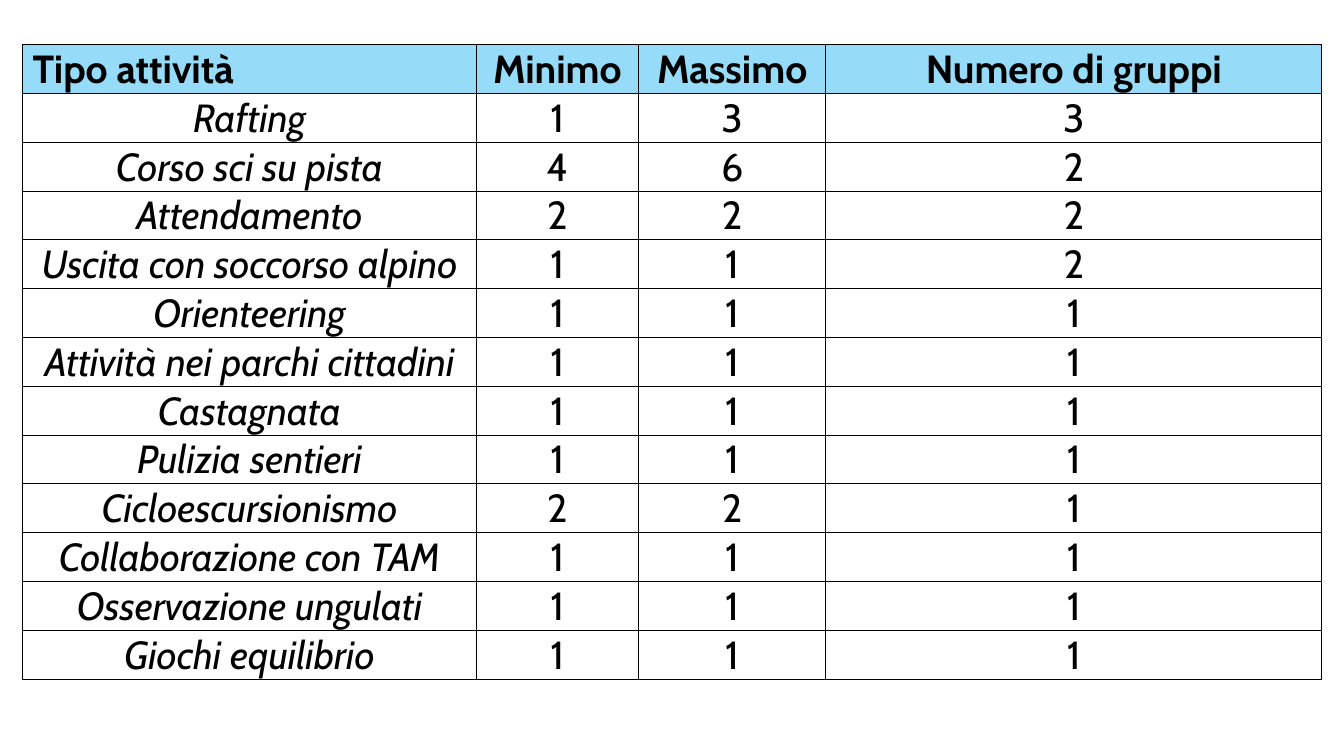
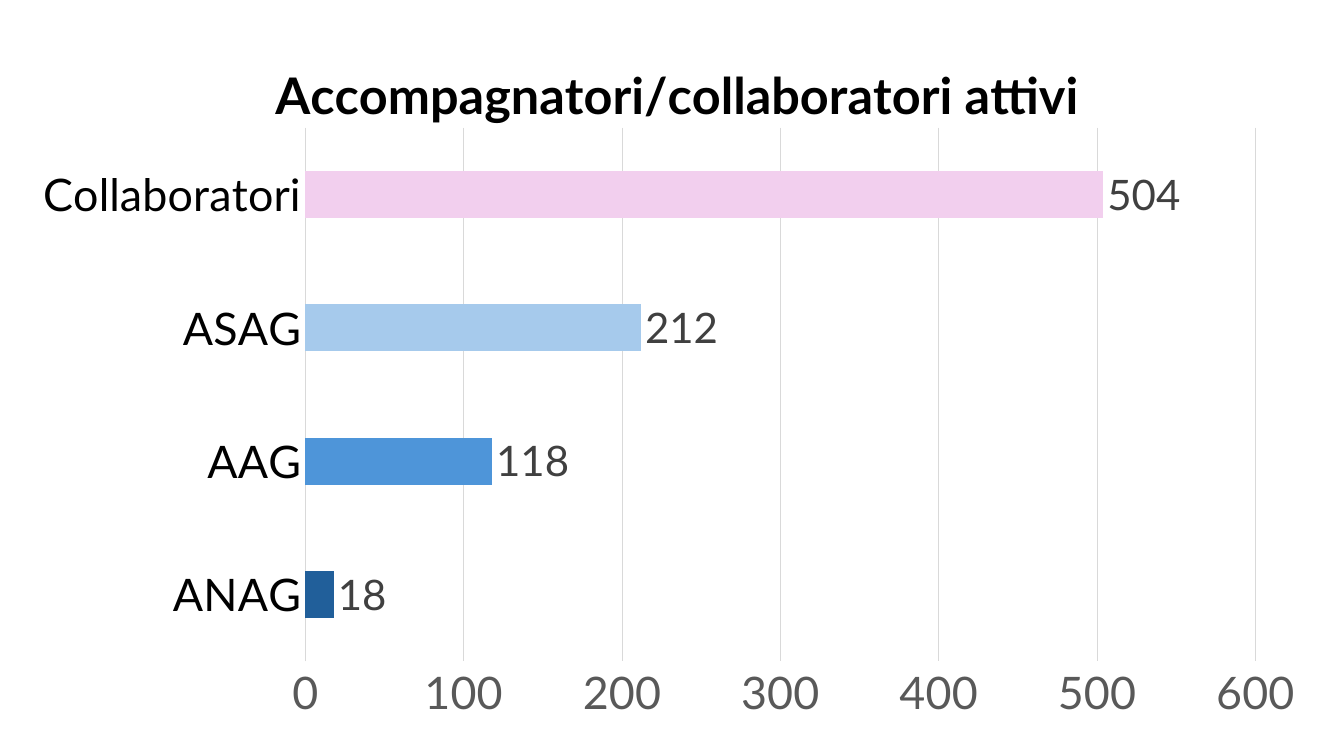
from lxml import etree
from pptx import Presentation
from pptx.chart import data
from pptx.dml import color
from pptx.enum import chart as ch, text
from pptx.oxml import ns
from pptx.util import Cm, Pt

BLACK, DARK_GREY, GREY, GRID_GREY = "000000", "404040", "595959", "D9D9D9"
HEADER_BLUE = "96DCF8"
TABLE_FONT, CHART_FONT = "Cabin", "Lato"

COLUMN_WIDTHS = 11.43, 4.09, 4.72, 12.5
ROW_HEIGHT = 1.21
HEADER = "Tipo attività", "Minimo", "Massimo", "Numero di gruppi"
ACTIVITIES = [
    ("Rafting", 1, 3, 3),
    ("Corso sci su pista", 4, 6, 2),
    ("Attendamento", 2, 2, 2),
    ("Uscita con soccorso alpino", 1, 1, 2),
    ("Orienteering", 1, 1, 1),
    ("Attività nei parchi cittadini", 1, 1, 1),
    ("Castagnata", 1, 1, 1),
    ("Pulizia sentieri", 1, 1, 1),
    ("Cicloescursionismo", 2, 2, 1),
    ("Collaborazione con TAM", 1, 1, 1),
    ("Osservazione ungulati", 1, 1, 1),
    ("Giochi equilibrio", 1, 1, 1),
]
LEADERS = [
    ("ANAG", 18, "215F9A"),
    ("AAG", 118, "4E95D9"),
    ("ASAG", 212, "A6CAEC"),
    ("Collaboratori", 504, "F2CFEE"),
]


def rgb(value):
    return color.RGBColor.from_string(value)


def set_font(font, name, size, hex_color, bold=False, italic=False):
    font.name, font.size = name, Pt(size)
    font.bold, font.italic = bold, italic
    font.color.rgb = rgb(hex_color)


def set_fill(fill, hex_color):
    fill.solid()
    fill.fore_color.rgb = rgb(hex_color)


def set_line(line, hex_color, width):
    line.color.rgb = rgb(hex_color)
    line.width = Pt(width)


def add_borders(cell, hex_color, width):
    tc_pr = cell._tc.get_or_add_tcPr()
    for i, side in enumerate(("lnL", "lnR", "lnT", "lnB")):
        ln = etree.Element(ns.qn(f"a:{side}"), w=str(Pt(width)))
        fill = etree.SubElement(ln, ns.qn("a:solidFill"))
        etree.SubElement(fill, ns.qn("a:srgbClr"), val=hex_color)
        tc_pr.insert(i, ln)


def fill_cell(cell, value, is_header, is_first):
    cell.vertical_anchor = text.MSO_ANCHOR.MIDDLE
    left_aligned = is_header and is_first
    cell.margin_left = Cm(0.25 if left_aligned else 0.03)
    cell.margin_right = cell.margin_top = Cm(0.03)
    cell.margin_bottom = 0
    p = cell.text_frame.paragraphs[0]
    p.alignment = text.PP_ALIGN.LEFT if left_aligned else text.PP_ALIGN.CENTER
    r = p.add_run()
    r.text = str(value)
    set_font(r.font, TABLE_FONT, 28, BLACK, bold=is_header,
             italic=is_first and not is_header)
    if is_header:
        set_fill(cell.fill, HEADER_BLUE)
    else:
        cell.fill.background()
    add_borders(cell, BLACK, 0.5)


def add_activity_table(s, left, top):
    rows = [HEADER, *ACTIVITIES]
    table = s.shapes.add_table(
        len(rows), len(HEADER), Cm(left), Cm(top),
        Cm(sum(COLUMN_WIDTHS)), Cm(ROW_HEIGHT * len(rows))).table
    table.horz_banding = False
    for column, width in zip(table.columns, COLUMN_WIDTHS):
        column.width = Cm(width)
    for i, values in enumerate(rows):
        table.rows[i].height = Cm(ROW_HEIGHT)
        for j, value in enumerate(values):
            fill_cell(table.cell(i, j), value, i == 0, j == 0)


def set_layout(parent, index, **settings):
    """Place a chart part by fractions of the chart's size."""
    for old in parent.findall(ns.qn("c:layout")):
        parent.remove(old)
    layout = etree.Element(ns.qn("c:layout"))
    manual = etree.SubElement(layout, ns.qn("c:manualLayout"))
    for tag, value in settings.items():
        etree.SubElement(manual, ns.qn(f"c:{tag}"), val=str(value))
    parent.insert(index, layout)


def style_axes(chart):
    for axis, hex_color in ((chart.category_axis, BLACK), (chart.value_axis, GREY)):
        axis.major_tick_mark = axis.minor_tick_mark = ch.XL_TICK_MARK.NONE
        set_font(axis.tick_labels.font, CHART_FONT, 32, hex_color)
    set_line(chart.category_axis.format.line, GRID_GREY, 0.75)
    values = chart.value_axis
    values.minimum_scale, values.maximum_scale, values.major_unit = 0, 600, 100
    values.format.line.fill.background()
    set_line(values.major_gridlines.format.line, GRID_GREY, 0.75)


def style_bars(plot):
    plot.gap_width = 182
    plot.vary_by_categories = False
    series = plot.series[0]
    set_fill(series.format.fill, "156082")
    for i, (_, _, hex_color) in enumerate(LEADERS):
        set_fill(series.points[i].format.fill, hex_color)
    labels = series.data_labels
    labels.show_value = True
    labels.position = ch.XL_LABEL_POSITION.OUTSIDE_END
    set_font(labels.font, CHART_FONT, 30, DARK_GREY)


def add_leader_chart(s, left, top, width, height):
    chart_data = data.CategoryChartData()
    chart_data.categories = [name for name, _, _ in LEADERS]
    chart_data.add_series("Series 1", [count for _, count, _ in LEADERS])
    chart = s.shapes.add_chart(
        ch.XL_CHART_TYPE.BAR_CLUSTERED, Cm(left), Cm(top),
        Cm(width), Cm(height), chart_data).chart
    set_font(chart.font, CHART_FONT, 10, BLACK)
    chart.has_legend = False
    chart.has_title = True
    r = chart.chart_title.text_frame.paragraphs[0].add_run()
    r.text = "Accompagnatori/collaboratori attivi"
    set_font(r.font, CHART_FONT, 36, BLACK, bold=True)
    style_axes(chart)
    style_bars(chart.plots[0])
    root = chart.element
    set_layout(root.xpath("c:chart/c:title")[0], 1,
               xMode="edge", yMode="edge", x=0.19, y=0.04)
    set_layout(root.xpath("c:chart/c:plotArea")[0], 0,
               layoutTarget="inner", xMode="edge", yMode="edge",
               x=0.22, y=0.15, w=0.73, h=0.75)


def main():
    prs = Presentation()
    prs.slide_width, prs.slide_height = Cm(33.87), Cm(19.05)
    blank = prs.slide_layouts[6]
    add_activity_table(prs.slides.add_slide(blank), 0.57, 1.12)
    add_leader_chart(prs.slides.add_slide(blank), 0.48, 0.53, 32.8, 17.93)
    prs.save("out.pptx")


if __name__ == "__main__":
    main()
